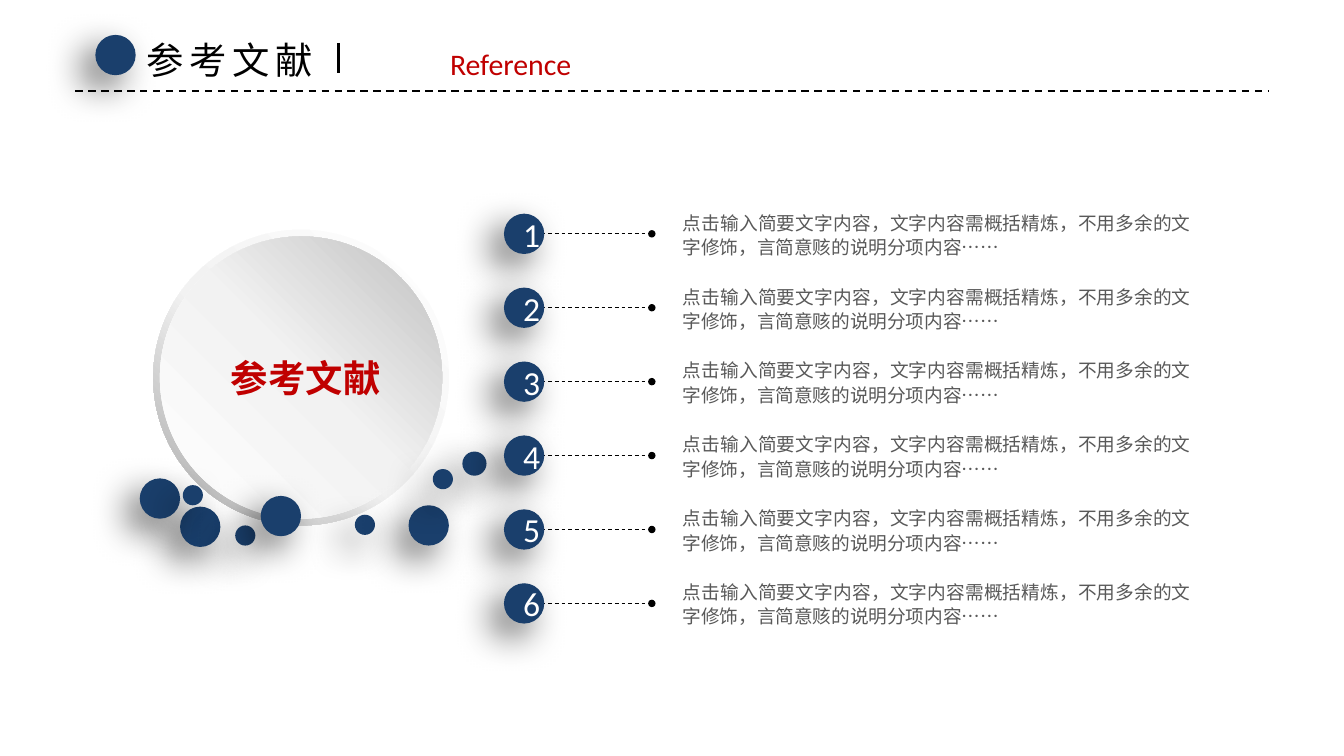
"""Build the reference slide: a large disc, six numbered notes and a title bar."""
from lxml import etree
from pptx import Presentation
from pptx.dml.color import RGBColor
from pptx.enum.dml import MSO_LINE
from pptx.enum.shapes import MSO_CONNECTOR, MSO_SHAPE
from pptx.enum.text import MSO_ANCHOR, MSO_AUTO_SIZE, PP_ALIGN
from pptx.oxml import parse_xml
from pptx.oxml.ns import nsdecls, qn
from pptx.util import Inches, Pt

OVAL, DONUT = MSO_SHAPE.OVAL, MSO_SHAPE.DONUT
STRAIGHT, DASH, SOLID = MSO_CONNECTOR.STRAIGHT, MSO_LINE.DASH, MSO_LINE.SOLID
LEFT, CENTER, JUSTIFY = PP_ALIGN.LEFT, PP_ALIGN.CENTER, PP_ALIGN.JUSTIFY
TOP, MIDDLE = MSO_ANCHOR.TOP, MSO_ANCHOR.MIDDLE
GROW = MSO_AUTO_SIZE.SHAPE_TO_FIT_TEXT
NAVY, RED, GREY, BLACK, WHITE = "1A3F6C", "C00000", "595959", "000000", "FFFFFF"
HAN, LATIN = "Noto Sans CJK SC", "Calibri"
NOTE = "点击输入简要文字内容，文字内容需概括精炼，不用多余的文字修饰，言简意赅的说明分项内容……"
SHADOW = (
    f'<a:outerShdw {nsdecls("a")} blurRad="{Pt(20)}" dist="{Pt(10)}" dir="8100000" '
    'algn="tr" rotWithShape="0"><a:srgbClr val="000000"><a:alpha val="60000"/>'
    "</a:srgbClr></a:outerShdw>"
)


def color(value):
    return RGBColor.from_string(value)


def write(shape, text, align, size, font, hue, frame_format, bold=False):
    frame = shape.text_frame
    for name, value in frame_format.items():
        setattr(frame, name, value)
    para = frame.paragraphs[0]
    para.alignment = align
    span = para.add_run()
    span.text = text
    for name, value in {"size": Pt(size), "name": font, "bold": bold}.items():
        setattr(span.font, name, value)
    span.font.color.rgb = color(hue)
    etree.SubElement(span.font._element, qn("a:ea"), typeface=font)
    return para


deck = Presentation()
deck.slide_width = Inches(10)
deck.slide_height = deck.slide_width * 9 // 16
page = deck.slides.add_slide(deck.slide_layouts[5])
tight = {f"margin_{side}": 0 for side in ("left", "right", "top", "bottom")}
tight |= {"word_wrap": True, "auto_size": GROW}
loose = {"word_wrap": False, "auto_size": GROW, "vertical_anchor": TOP}

title = page.shapes.title
title.left, title.top = Inches(0.99), Inches(0.23)
title.width, title.height = Inches(1.49), Inches(0.44)
para = write(title, "参考文献", LEFT, 20, HAN, BLACK, loose)
para.runs[0].font._element.set("spc", "300")

disc = page.shapes.add_group_shape()
for kind, left, top, size, angle, stops in [
    (DONUT, 1.14, 1.71, 2.2, 225, [(0, WHITE), (55, "F2F2F2"), (100, "A6A6A6")]),
    (OVAL, 1.19, 1.76, 2.1, 45, [(0, WHITE), (51, "F2F2F2"), (100, "BFBFBF")]),
]:
    shape = disc.shapes.add_shape(kind, Inches(left), Inches(top), Inches(size), Inches(size))
    if kind == DONUT:
        shape.adjustments[0] = 0.049
    shape.shadow.inherit = False
    shape.line.fill.background()
    shape.fill.gradient()
    shape.fill.gradient_angle = angle
    stop_list = shape._element.spPr.find(".//" + qn("a:gsLst"))
    stop_list.clear()
    for position, hue in stops:
        stop = etree.SubElement(stop_list, qn("a:gs"), pos=str(position * 1000))
        etree.SubElement(stop, qn("a:srgbClr"), val=hue)

dots = [
    (1.34, 3.77, 0.3, ""), (1.75, 3.91, 0.15, ""), (1.94, 3.69, 0.3, ""),
    (2.64, 3.83, 0.15, ""), (1.04, 3.56, 0.3, ""), (1.36, 3.61, 0.15, ""),
    (3.04, 3.76, 0.3, ""), (3.44, 3.36, 0.18, ""), (3.22, 3.49, 0.15, ""),
    (0.71, 0.26, 0.3, ""),
]
lines = [
    (0.56, 0.68, 9.44, 0.68, 1, DASH, False),
    (2.52, 0.32, 2.52, 0.54, 1.5, SOLID, False),
]
for row in range(6):
    middle = 1.74 + 0.55 * row
    dots.append((3.75, middle - 0.15, 0.3, str(row + 1)))
    lines.append((3.98, middle, 4.85, middle, 0.5, DASH, True))
    box = page.shapes.add_textbox(Inches(5.08), Inches(middle - 0.18), Inches(3.78), Inches(0.36))
    para = write(box, NOTE, JUSTIFY, 10, HAN, GREY, tight)
    para.line_spacing = Pt(13)

for x1, y1, x2, y2, width, dash, oval_end in lines:
    line = page.shapes.add_connector(STRAIGHT, Inches(x1), Inches(y1), Inches(x2), Inches(y2))
    line.line.color.rgb = color(BLACK)
    line.line.width = Pt(width)
    line.line.dash_style = dash
    if oval_end:
        etree.SubElement(line.line._get_or_add_ln(), qn("a:tailEnd"), type="oval", w="sm", len="sm")
    etree.SubElement(line._element.spPr, qn("a:effectLst"))

for left, top, size, label in dots:
    dot = page.shapes.add_shape(OVAL, Inches(left), Inches(top), Inches(size), Inches(size))
    dot.fill.solid()
    dot.fill.fore_color.rgb = color(NAVY)
    dot.line.fill.background()
    dot.shadow.inherit = False
    dot._element.spPr.find(qn("a:effectLst")).append(parse_xml(SHADOW))
    if label:
        write(dot, label, CENTER, 18, LATIN, WHITE, {"vertical_anchor": MIDDLE})

box = page.shapes.add_textbox(Inches(1.51), Inches(2.64), Inches(1.53), Inches(0.34))
write(box, "参考文献", CENTER, 20, HAN, RED, tight, bold=True)
box = page.shapes.add_textbox(Inches(3.2), Inches(0.29), Inches(1.2), Inches(0.37))
write(box, "Reference", CENTER, 16, LATIN, RED, loose)

deck.save("out.pptx")
